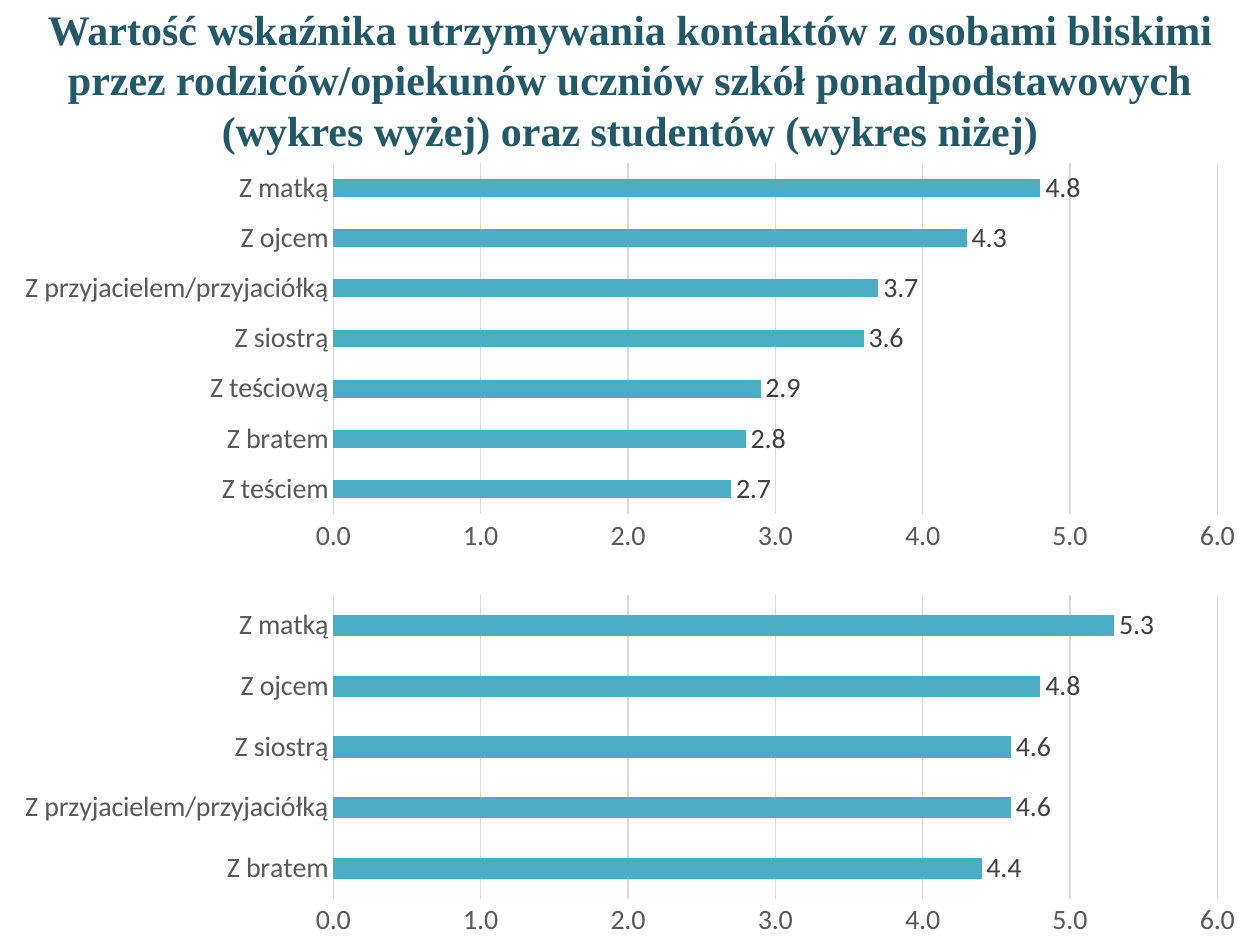
from dataclasses import dataclass

from pptx import Presentation
from pptx.chart.data import CategoryChartData
from pptx.dml.color import RGBColor
from pptx.enum.chart import XL_CHART_TYPE as ChartType
from pptx.enum.chart import XL_LABEL_POSITION as LabelPosition
from pptx.enum.chart import XL_TICK_MARK as TickMark
from pptx.enum.text import MSO_ANCHOR as Anchor
from pptx.enum.text import PP_ALIGN as Align
from pptx.util import Cm, Pt

# Colours
TITLE_COLOR = RGBColor(0x21, 0x59, 0x68)
BAR_COLOR = RGBColor(0x4B, 0xAC, 0xC6)
GRID_COLOR = RGBColor(0xD9, 0xD9, 0xD9)
AXIS_TEXT_COLOR = RGBColor(0x59, 0x59, 0x59)
LABEL_COLOR = RGBColor(0x40, 0x40, 0x40)

# Format values
TITLE_FONT = {"name": "Times New Roman", "size": Pt(24), "bold": True}
CHART_FONT = {"name": "Calibri", "size": Pt(16), "bold": False}
TITLE_FRAME = {"word_wrap": True, "vertical_anchor": Anchor.MIDDLE}
AXIS_FORMAT = {"major_tick_mark": TickMark.NONE, "minor_tick_mark": TickMark.NONE}
VALUE_SCALE = {"minimum_scale": 0, "maximum_scale": 6, "major_unit": 1,
               "has_major_gridlines": True}
NUMBER_FORMAT = {"number_format": "0.0", "number_format_is_linked": False}
LABEL_FORMAT = {"show_value": True, "position": LabelPosition.OUTSIDE_END}

SLIDE_WIDTH, SLIDE_HEIGHT = Cm(25.4), Cm(19.05)
TITLE_HEIGHT = Cm(3.18)
TITLE = ("Wartość wskaźnika utrzymywania kontaktów z osobami bliskimi "
         "przez rodziców/opiekunów uczniów szkół ponadpodstawowych "
         "(wykres wyżej) oraz studentów (wykres niżej)")


@dataclass(frozen=True)
class ContactChart:
    top: Cm
    height: Cm
    values: dict[str, float]  # from the bottom bar to the top bar


CHARTS = [
    # Parents of secondary school pupils
    ContactChart(Cm(3.12), Cm(8.2), {
        "Z teściem": 2.7, "Z bratem": 2.8, "Z teściową": 2.9, "Z siostrą": 3.6,
        "Z przyjacielem/przyjaciółką": 3.7, "Z ojcem": 4.3, "Z matką": 4.8}),
    # Parents of students
    ContactChart(Cm(11.86), Cm(7.19), {
        "Z bratem": 4.4, "Z przyjacielem/przyjaciółką": 4.6, "Z siostrą": 4.6,
        "Z ojcem": 4.8, "Z matką": 5.3}),
]


def apply_format(target: object, *formats: dict) -> None:
    for values in formats:
        for name, value in values.items():
            setattr(target, name, value)


def style_font(font, values: dict, color: RGBColor) -> None:
    apply_format(font, values)
    font.color.rgb = color


def style_line(line) -> None:
    line.color.rgb = GRID_COLOR
    line.width = Pt(0.75)


def add_title(slide) -> None:
    shape = slide.shapes.add_textbox(0, 0, SLIDE_WIDTH, TITLE_HEIGHT)
    apply_format(shape.text_frame, TITLE_FRAME)
    paragraph = shape.text_frame.paragraphs[0]
    paragraph.alignment = Align.CENTER
    run = paragraph.add_run()
    run.text = TITLE
    style_font(run.font, TITLE_FONT, TITLE_COLOR)


def add_contact_chart(slide, contact: ContactChart) -> None:
    data = CategoryChartData(number_format="0.0")
    data.categories = list(contact.values)
    data.add_series("Series 1", list(contact.values.values()))
    chart = slide.shapes.add_chart(ChartType.BAR_CLUSTERED, 0, contact.top,
                                   SLIDE_WIDTH, contact.height, data).chart
    apply_format(chart, {"has_legend": False, "has_title": False})

    # Axes
    for axis in (chart.category_axis, chart.value_axis):
        apply_format(axis, AXIS_FORMAT)
        style_font(axis.tick_labels.font, CHART_FONT, AXIS_TEXT_COLOR)
    style_line(chart.category_axis.format.line)
    value_axis = chart.value_axis
    apply_format(value_axis, VALUE_SCALE)
    apply_format(value_axis.tick_labels, NUMBER_FORMAT)
    value_axis.format.line.fill.background()
    style_line(value_axis.major_gridlines.format.line)

    # Bars and their labels
    plot = chart.plots[0]
    apply_format(plot, {"gap_width": 182, "vary_by_categories": False})
    series = plot.series[0]
    series.format.fill.solid()
    series.format.fill.fore_color.rgb = BAR_COLOR
    labels = series.data_labels
    apply_format(labels, NUMBER_FORMAT, LABEL_FORMAT)
    style_font(labels.font, CHART_FONT, LABEL_COLOR)


def main() -> None:
    presentation = Presentation()
    apply_format(presentation, {"slide_width": SLIDE_WIDTH,
                                "slide_height": SLIDE_HEIGHT})
    slide = presentation.slides.add_slide(presentation.slide_layouts[6])
    add_title(slide)
    for contact in CHARTS:
        add_contact_chart(slide, contact)
    presentation.save("out.pptx")


if __name__ == "__main__":
    main()
